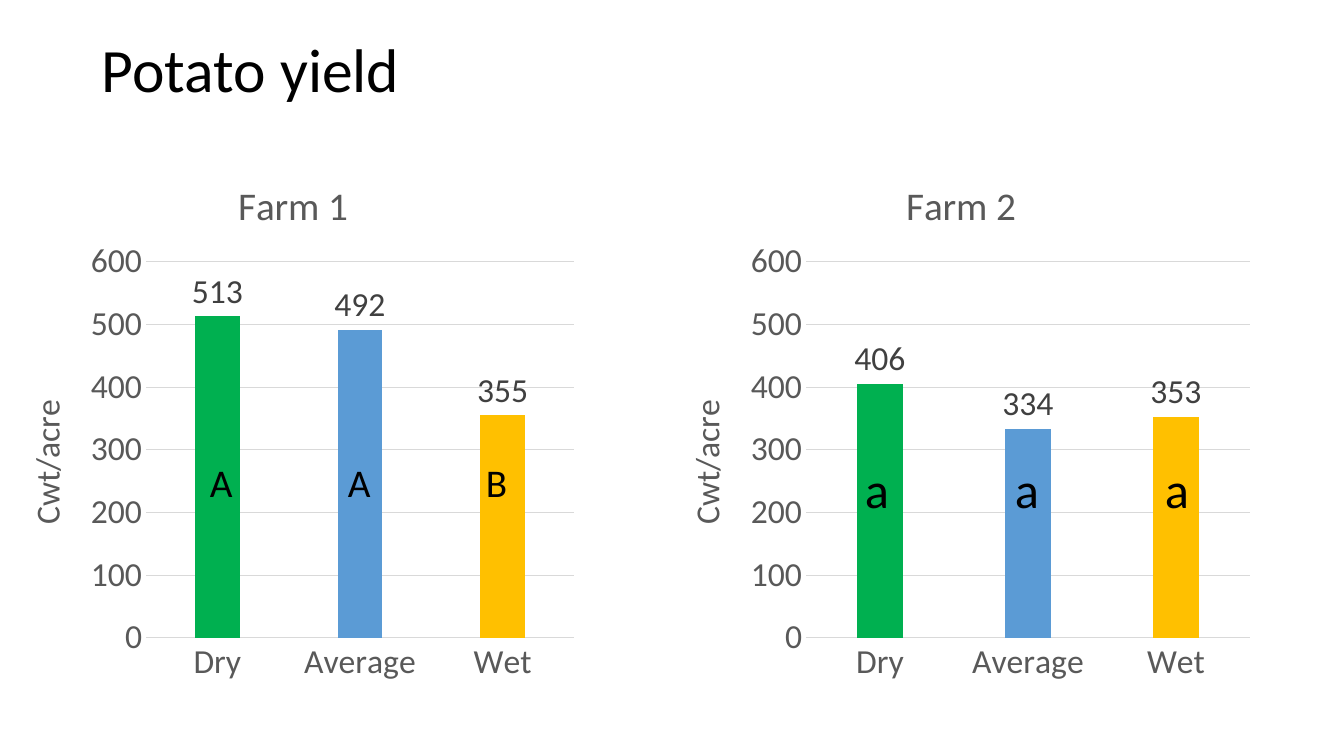
from lxml import etree
from pptx import Presentation
from pptx.chart.data import CategoryChartData
from pptx.dml.color import RGBColor
from pptx.enum.chart import XL_CHART_TYPE as ChartType
from pptx.enum.chart import XL_LABEL_POSITION as LabelPosition
from pptx.enum.chart import XL_TICK_MARK as TickMark
from pptx.enum.text import MSO_ANCHOR as Anchor
from pptx.oxml.ns import qn
from pptx.util import Pt

PX = 914400 / 100.8
FONT = "Calibri"
COLOURS = {
    "text": "000000", "axis": "595959", "label": "404040", "grid": "D9D9D9",
    "dry": "00B050", "average": "5B9BD5", "wet": "FFC000",
}
SEASONS = ["Dry", "Average", "Wet"]


def px(length):
    return round(length * PX)


def colour(name):
    return RGBColor.from_string(COLOURS[name])


def style_font(font, size, colour_name):
    font.name = FONT
    font.size = Pt(size)
    font.bold = False
    font.color.rgb = colour(colour_name)


def style_line(line, colour_name):
    line.color.rgb = colour(colour_name)
    line.width = Pt(0.75)


def add_text(slide, box, text, size, tab_step=0):
    text_frame = slide.shapes.add_textbox(*map(px, box)).text_frame
    text_frame.word_wrap = True
    text_frame.text = text
    paragraph = text_frame.paragraphs[0]
    if tab_step:
        tab_list = etree.SubElement(paragraph._p.get_or_add_pPr(), qn("a:tabLst"))
        for column in range(1, len(SEASONS)):
            etree.SubElement(tab_list, qn("a:tab"),
                             pos=str(px(column * tab_step)), algn="l")
    style_font(paragraph.runs[0].font, size, "text")
    return text_frame


def add_heading(slide, box):
    text_frame = add_text(slide, box, "Potato yield", 44)
    text_frame.vertical_anchor = Anchor.MIDDLE
    text_frame.paragraphs[0].line_spacing = 0.9


def set_title(owner, text, size):
    text_frame = owner.text_frame
    text_frame.text = text
    style_font(text_frame.paragraphs[0].runs[0].font, size, "axis")


def place_plot(chart, width, height):
    """Fix the inner plot area inside a chart of the given size."""
    left, top, right_margin, plot_height = 146, 106, 12, 376
    plot_area = chart._chartSpace.find(qn("c:chart")).find(qn("c:plotArea"))
    for old_layout in plot_area.findall(qn("c:layout")):
        plot_area.remove(old_layout)
    layout = etree.Element(qn("c:layout"))
    manual = etree.SubElement(layout, qn("c:manualLayout"))
    for tag, value in (
        ("layoutTarget", "inner"), ("xMode", "edge"), ("yMode", "edge"),
        ("x", left / width), ("y", top / height),
        ("w", (width - left - right_margin) / width), ("h", plot_height / height),
    ):
        etree.SubElement(manual, qn(f"c:{tag}"), val=str(value))
    plot_area.insert(0, layout)


def add_farm_chart(slide, box, title, yields):
    data = CategoryChartData(number_format="#,##0")
    data.categories = SEASONS
    data.add_series("Series 1", yields)
    chart = slide.shapes.add_chart(
        ChartType.COLUMN_CLUSTERED, *map(px, box), data).chart
    style_font(chart.font, 24, "text")
    chart.has_legend = False
    chart.has_title = True
    set_title(chart.chart_title, title, 28)
    chart.chart_title.include_in_layout = False
    place_plot(chart, *box[2:])

    # Axes
    value_axis, category_axis = chart.value_axis, chart.category_axis
    for axis in (value_axis, category_axis):
        axis.major_tick_mark = axis.minor_tick_mark = TickMark.NONE
        style_font(axis.tick_labels.font, 24, "axis")
    style_line(category_axis.format.line, "grid")
    value_axis.format.line.fill.background()
    value_axis.minimum_scale, value_axis.maximum_scale = 0, 600
    value_axis.major_unit = 100
    style_line(value_axis.major_gridlines.format.line, "grid")
    set_title(value_axis.axis_title, "Cwt/acre", 24)

    # Columns and their values
    plot = chart.plots[0]
    plot.vary_by_categories = False
    plot.gap_width, plot.overlap = 219, -27
    series = plot.series[0]
    for index, season in enumerate(SEASONS):
        fill = series.points[index].format.fill
        fill.solid()
        fill.fore_color.rgb = colour(season.lower())
    labels = series.data_labels
    labels.show_value = True
    labels.number_format, labels.number_format_is_linked = "#,##0", False
    labels.position = LabelPosition.OUTSIDE_END
    style_font(labels.font, 24, "label")


def add_farm(slide, box, title, yields, groups, group_size, group_left, step):
    """Chart with a row of significance letters over its columns."""
    left, top = box[:2]
    add_farm_chart(slide, box, title, yields)
    add_text(slide, (left + group_left, top + 297, 356, 2 * group_size),
             "\t".join(groups), group_size, step)


def main():
    presentation = Presentation()
    presentation.slide_width, presentation.slide_height = px(1344), px(756)
    slide = presentation.slides.add_slide(presentation.slide_layouts[6])
    add_heading(slide, (92, 0, 1159, 146))
    add_farm(slide, (0, 156, 586, 538), "Farm 1", (513, 492, 355),
             "AAB", 28, 200, 138)
    add_farm(slide, (660, 156, 602, 538), "Farm 2", (406, 334, 353),
             "aaa", 36, 195, 150)
    presentation.save("out.pptx")


if __name__ == "__main__":
    main()
